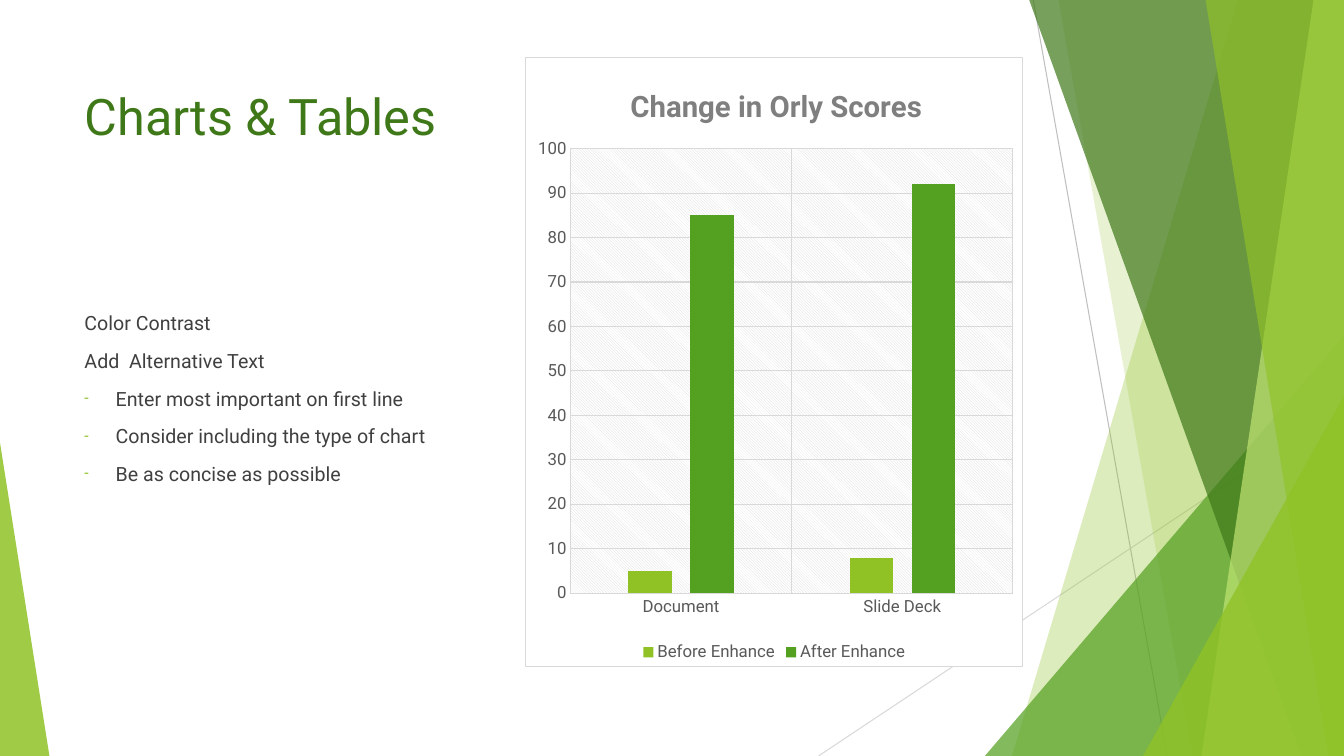
from dataclasses import dataclass

from lxml import etree
from pptx import Presentation
from pptx import util as u
from pptx.chart.data import CategoryChartData
from pptx.dml.color import RGBColor
from pptx.enum import chart as ch, shapes, text
from pptx.oxml import parse_xml
from pptx.oxml.ns import nsdecls, qn


@dataclass(frozen=True)
class Theme:
    font: str = "Roboto"
    lime: str = "90C226"
    green: str = "54A021"
    dark: str = "3F7819"
    pale: str = "C0E474"
    ink: str = "404040"
    label: str = "595959"
    heading: str = "7F7F7F"
    rule: str = "D9D9D9"
    rule_dark: str = "BFBFBF"
    white: str = "FFFFFF"
    title_size: float = 36
    chart_title_size: float = 21
    body_size: float = 14
    label_size: float = 12
    hairline: float = 0.75


T = Theme()
W, H = u.Inches(13.33), u.Inches(7.5)


def px(share):
    return u.Emu(round(W * share / 100))


def py(share):
    return u.Emu(round(H * share / 100))


def box(left, top, width, height):
    return px(left), py(top), px(width), py(height)


def style_font(font, size, color, bold=False):
    font.name, font.size, font.bold = T.font, u.Pt(size), bold
    font.color.rgb = RGBColor.from_string(color)


def style_line(line, color):
    line.color.rgb = RGBColor.from_string(color)
    line.width = u.Pt(T.hairline)


def tint(sp, color, opacity):
    sp.shadow.inherit = False
    sp.line.fill.background()
    sp.fill.solid()
    sp.fill.fore_color.rgb = RGBColor.from_string(color)
    clr = sp._element.spPr.find(".//" + qn("a:srgbClr"))
    etree.SubElement(clr, qn("a:alpha"), val=str(opacity * 1000))


def add_rule(s, x1, y1, x2, y2, color):
    cn = s.shapes.add_connector(shapes.MSO_CONNECTOR.STRAIGHT, px(x1), py(y1), px(x2), py(y2))
    style_line(cn.line, color)
    etree.SubElement(cn._element.spPr, qn("a:effectLst"))


def add_facet(s, top_x, bottom_x, color, opacity):
    fb = s.shapes.build_freeform(px(top_x), 0)
    fb.add_line_segments([(W, 0), (W, H), (px(bottom_x), H)], close=True)
    tint(fb.convert_to_shape(), color, opacity)


def add_corner(s, left, top, width, apex, color, opacity):
    sp = s.shapes.add_shape(shapes.MSO_SHAPE.ISOSCELES_TRIANGLE, *box(left, top, width, 100 - top))
    sp.adjustments[0] = apex
    tint(sp, color, opacity)


def add_text(tf, content, size=T.body_size, color=T.ink, first=False, before=0, bullet=None):
    p = tf.paragraphs[0] if first else tf.add_paragraph()
    p.alignment = text.PP_ALIGN.LEFT
    p.space_before = u.Pt(before)
    r = p.add_run()
    r.text = content
    style_font(r.font, size, color)
    if bullet:
        pPr = p._p.get_or_add_pPr()
        indent = u.Inches(0.31)
        pPr.set("marL", str(indent))
        pPr.set("indent", str(-indent))
        clr = etree.SubElement(pPr, qn("a:buClr"))
        etree.SubElement(clr, qn("a:srgbClr"), val=T.lime)
        etree.SubElement(pPr, qn("a:buSzPct"), val="80000")
        etree.SubElement(pPr, qn("a:buFont"), typeface=T.font)
        etree.SubElement(pPr, qn("a:buChar"), char=bullet)


def add_title(s, content):
    sp = s.shapes.title
    sp.left, sp.top, sp.width, sp.height = box(5.55, 10.53, 27.76, 9.47)
    tf = sp.text_frame
    tf.word_wrap = False
    tf.vertical_anchor = text.MSO_ANCHOR.MIDDLE
    add_text(tf, content, T.title_size, T.dark, first=True)


def add_body(s, lines):
    tf = s.shapes.add_textbox(*box(5.55, 40.53, 31.66, 37.73)).text_frame
    tf.word_wrap = True
    for i, (content, bullet) in enumerate(lines):
        add_text(tf, content, first=i == 0, before=10, bullet=bullet)


def solid(color):
    return f'<a:solidFill><a:srgbClr val="{color}"/></a:solidFill>'


def chart_props(inner):
    return parse_xml(f'<c:spPr {nsdecls("c", "a")}>{inner}</c:spPr>')


def manual_layout(parent, target="", **shares):
    old = parent.find(qn("c:layout"))
    if old is not None:
        parent.remove(old)
    modes = "".join(f'<c:{k}Mode val="edge"/>' for k in "xy")
    sizes = "".join(f'<c:{k} val="{v}"/>' for k, v in shares.items())
    return parse_xml(f'<c:layout {nsdecls("c")}><c:manualLayout>{target}{modes}{sizes}'
                     '</c:manualLayout></c:layout>')


def style_axis(axis):
    axis.major_tick_mark = axis.minor_tick_mark = ch.XL_TICK_MARK.NONE
    axis.has_major_gridlines = True
    style_line(axis.major_gridlines.format.line, T.rule)
    style_line(axis.format.line, T.rule)
    style_font(axis.tick_labels.font, T.label_size, T.label)


def add_scores_chart(s, title, categories, series):
    data = CategoryChartData()
    data.categories = categories
    for name, values, _ in series:
        data.add_series(name, values)
    chart = s.shapes.add_chart(ch.XL_CHART_TYPE.COLUMN_CLUSTERED,
                               *box(39.08, 7.53, 37.06, 80.67), data).chart
    style_font(chart.font, T.label_size, T.label)
    chart.has_title = True
    p = chart.chart_title.text_frame.paragraphs[0]
    r = p.add_run()
    r.text = title
    style_font(r.font, T.chart_title_size, T.heading, bold=True)
    chart.has_legend = True
    chart.legend.position = ch.XL_LEGEND_POSITION.BOTTOM
    chart.legend.include_in_layout = False
    style_font(chart.legend.font, T.label_size, T.label)
    style_axis(chart.category_axis)
    style_axis(chart.value_axis)
    chart.value_axis.format.line.fill.background()
    chart.value_axis.minimum_scale, chart.value_axis.maximum_scale = 0, 100
    chart.value_axis.major_unit = 10
    plot = chart.plots[0]
    plot.vary_by_categories = False
    plot.gap_width, plot.overlap = 267, -43
    for bars, (_, _, color) in zip(plot.series, series):
        bars.format.fill.solid()
        bars.format.fill.fore_color.rgb = RGBColor.from_string(color)

    frame = chart._chartSpace.find(qn("c:chart"))
    frame.addnext(chart_props(solid(T.white) + f'<a:ln w="{u.Pt(T.hairline)}">{solid(T.rule)}</a:ln>'))
    area = frame.find(qn("c:plotArea"))
    area.insert(0, manual_layout(area, '<c:layoutTarget val="inner"/>', x=0.09, y=0.15, w=0.89, h=0.73))
    area.append(chart_props(f'<a:pattFill prst="ltDnDiag"><a:fgClr><a:srgbClr val="{T.rule}"/></a:fgClr>'
                            f'<a:bgClr><a:srgbClr val="{T.white}"/></a:bgClr></a:pattFill>'))
    heading = frame.find(qn("c:title"))
    layout = manual_layout(heading, x=0.2, y=0.04)
    heading.find(qn("c:tx")).addnext(layout)


def main():
    prs = Presentation()
    prs.slide_width, prs.slide_height = W, H
    s = prs.slides.add_slide(prs.slide_layouts[5])
    add_rule(s, 76.88, 0, 86.85, 100, T.rule_dark)
    add_rule(s, 100, 53.73, 60.9, 100, T.rule)
    add_facet(s, 92.1, 75.3, T.lime, 30)
    add_facet(s, 78.75, 88.73, T.lime, 20)
    add_corner(s, 73.28, 44.4, 26.72, 1, T.green, 72)
    add_facet(s, 76.58, 96.83, T.dark, 70)
    add_facet(s, 97.73, 89.4, T.pale, 70)
    add_facet(s, 89.7, 98.85, T.lime, 65)
    add_corner(s, 85.05, 52.4, 14.95, 1, T.lime, 80)
    add_corner(s, 0, 58.53, 3.68, 0, T.lime, 85)
    add_title(s, "Charts & Tables")
    add_body(s, [("Color Contrast", None),
                 ("Add  Alternative Text", None),
                 ("Enter most important on first line", "-"),
                 ("Consider including the type of chart", "-"),
                 ("Be as concise as possible", "-")])
    add_scores_chart(s, "Change in Orly Scores", ["Document", "Slide Deck"],
                     [("Before Enhance", (5, 8), T.lime), ("After Enhance", (85, 92), T.green)])
    prs.save("out.pptx")


if __name__ == "__main__":
    main()
